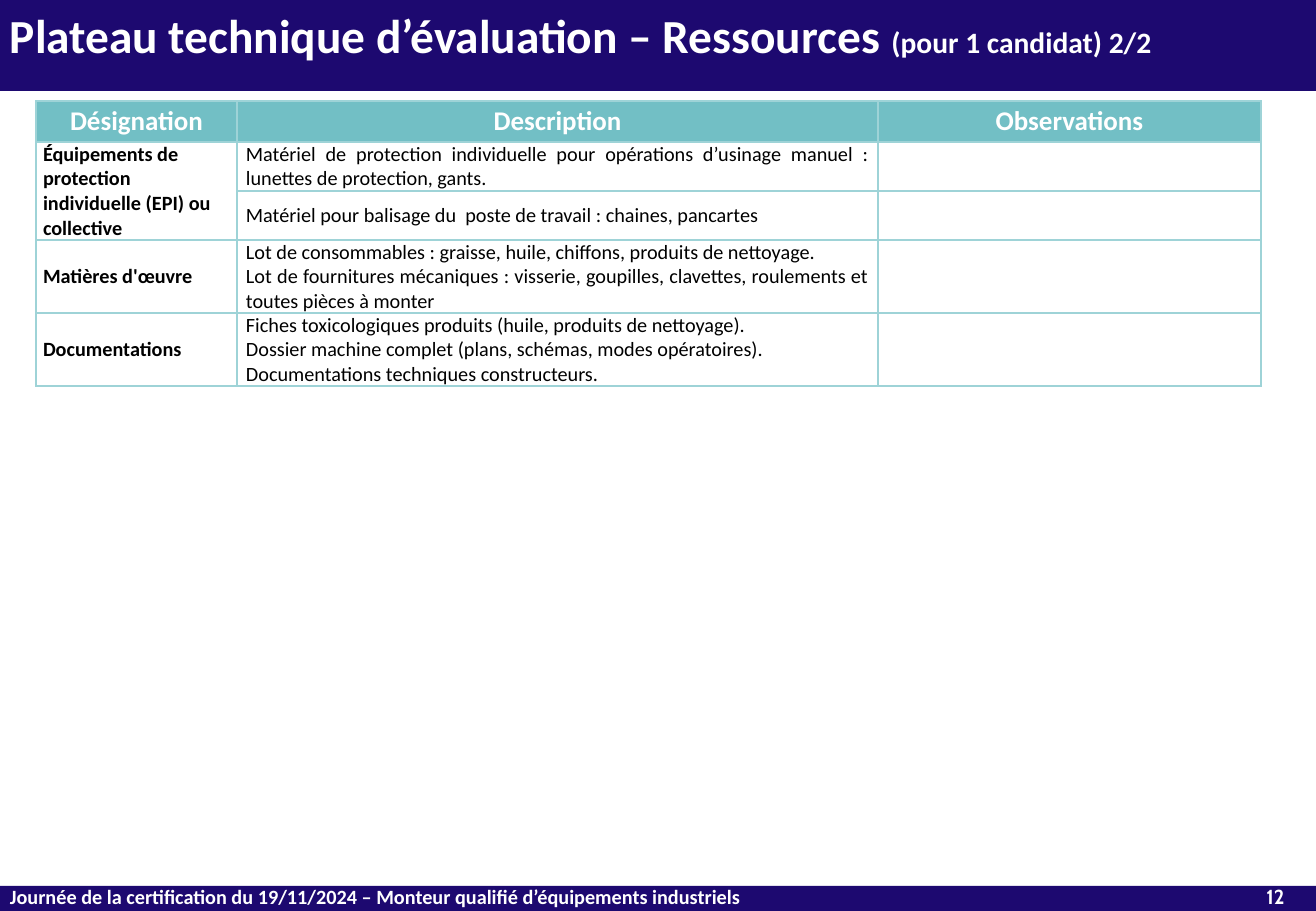
import pptx
import pptx.util
import pptx.dml.color
import pptx.enum.shapes
import pptx.enum.text
import lxml.etree

PX = 914400 / 121.5
ALIGN = pptx.enum.text.PP_ALIGN
THEME = {
    "navy": "1D0970", "teal": "72BFC5", "grid": "9ED3D7",
    "white": "FFFFFF", "black": "000000",
    "font": "Calibri", "number_font": "Cabin",
    "title": 28.1, "subtitle": 17.5, "heading": 16, "body": 12,
}


def px(*lengths):
    return [round(length * PX) for length in lengths]


def style(font, size, color, bold=True, name=THEME["font"]):
    font.name = name
    font.size = pptx.util.Pt(size)
    font.bold = bold
    font.color.rgb = pptx.dml.color.RGBColor.from_string(color)


deck = pptx.Presentation()
deck.slide_width, deck.slide_height = px(1316, 911)
slide = deck.slides.add_slide(deck.slide_layouts[6])

for top, height in [(0, 91), (886, 25)]:
    band = slide.shapes.add_shape(
        pptx.enum.shapes.MSO_SHAPE.RECTANGLE, *px(0, top, 1316, height))
    band.shadow.inherit = False
    band.fill.solid()
    band.fill.fore_color.rgb = pptx.dml.color.RGBColor.from_string(THEME["navy"])
    band.line.fill.background()

captions = [
    ((1242, 878, 67, 36), ALIGN.CENTER, THEME["number_font"],
     [("12", THEME["body"])]),
    ((-2, 878, 1244, 36), ALIGN.LEFT, THEME["font"],
     [("Journée de la certification du 19/11/2024 – Monteur qualifié d’équipements industriels",
       THEME["body"])]),
    ((-2, 0, 1318, 91), ALIGN.LEFT, THEME["font"],
     [("Plateau technique d’évaluation – Ressources ", THEME["title"]),
      ("(pour 1 candidat) 2/2", THEME["subtitle"])]),
]
for box, alignment, font_name, pieces in captions:
    caption = slide.shapes.add_textbox(*px(*box)).text_frame
    caption.word_wrap = True
    line = caption.paragraphs[0]
    line.alignment = alignment
    style(line.font, pieces[0][1], THEME["white"], name=font_name)
    for wording, size in pieces:
        run = line.add_run()
        run.text = wording
        style(run.font, size, THEME["white"], name=font_name)

resources = [
    ["Désignation", "Description", "Observations"],
    ["Équipements de protection\nindividuelle (EPI) ou collective",
     "Matériel de protection individuelle pour opérations d’usinage manuel : lunettes de protection, gants.",
     ""],
    ["", "Matériel pour balisage du  poste de travail : chaines, pancartes", ""],
    ["Matières d'œuvre",
     "Lot de consommables : graisse, huile, chiffons, produits de nettoyage.\n"
     "Lot de fournitures mécaniques : visserie, goupilles, clavettes, roulements et toutes pièces à monter",
     ""],
    ["Documentations",
     "Fiches toxicologiques produits (huile, produits de nettoyage).\n"
     "Dossier machine complet (plans, schémas, modes opératoires).\n"
     "Documentations techniques constructeurs.",
     ""],
]
column_widths = px(201, 641, 383)
row_heights = px(41, 49, 49, 73, 73)
table = slide.shapes.add_table(5, 3, *px(36, 101, 1225, 285)).table
table.first_row = table.horz_banding = False
for column, width in zip(table.columns, column_widths):
    column.width = width
for row, height in zip(table.rows, row_heights):
    row.height = height
table.cell(1, 0).merge(table.cell(2, 0))

for row_index, entries in enumerate(resources):
    heading = row_index == 0
    for column_index, wording in enumerate(entries):
        cell = table.cell(row_index, column_index)
        described = column_index == 1 and not heading
        cell.vertical_anchor = pptx.enum.text.MSO_ANCHOR.MIDDLE
        cell.margin_left, cell.margin_right = px(*[9 if described else 7] * 2)
        cell.margin_top = cell.margin_bottom = 0
        if heading:
            cell.fill.solid()
            cell.fill.fore_color.rgb = pptx.dml.color.RGBColor.from_string(THEME["teal"])
        else:
            cell.fill.background()
        if wording:
            cell.text = wording
        for paragraph in cell.text_frame.paragraphs:
            paragraph.alignment = (
                ALIGN.CENTER if heading else ALIGN.JUSTIFY if described else ALIGN.LEFT)
            style(paragraph.font, THEME["heading" if heading else "body"],
                  THEME["white" if heading else "black"], not described)
        properties = cell._tc.get_or_add_tcPr()
        for position, side in enumerate(["lnL", "lnR", "lnT", "lnB"]):
            border = lxml.etree.fromstring(
                f'<a:{side} xmlns:a="http://schemas.openxmlformats.org/drawingml/2006/main" w="12700">'
                f'<a:solidFill><a:srgbClr val="{THEME["grid"]}"/></a:solidFill></a:{side}>')
            properties.insert(position, border)

deck.save("out.pptx")
